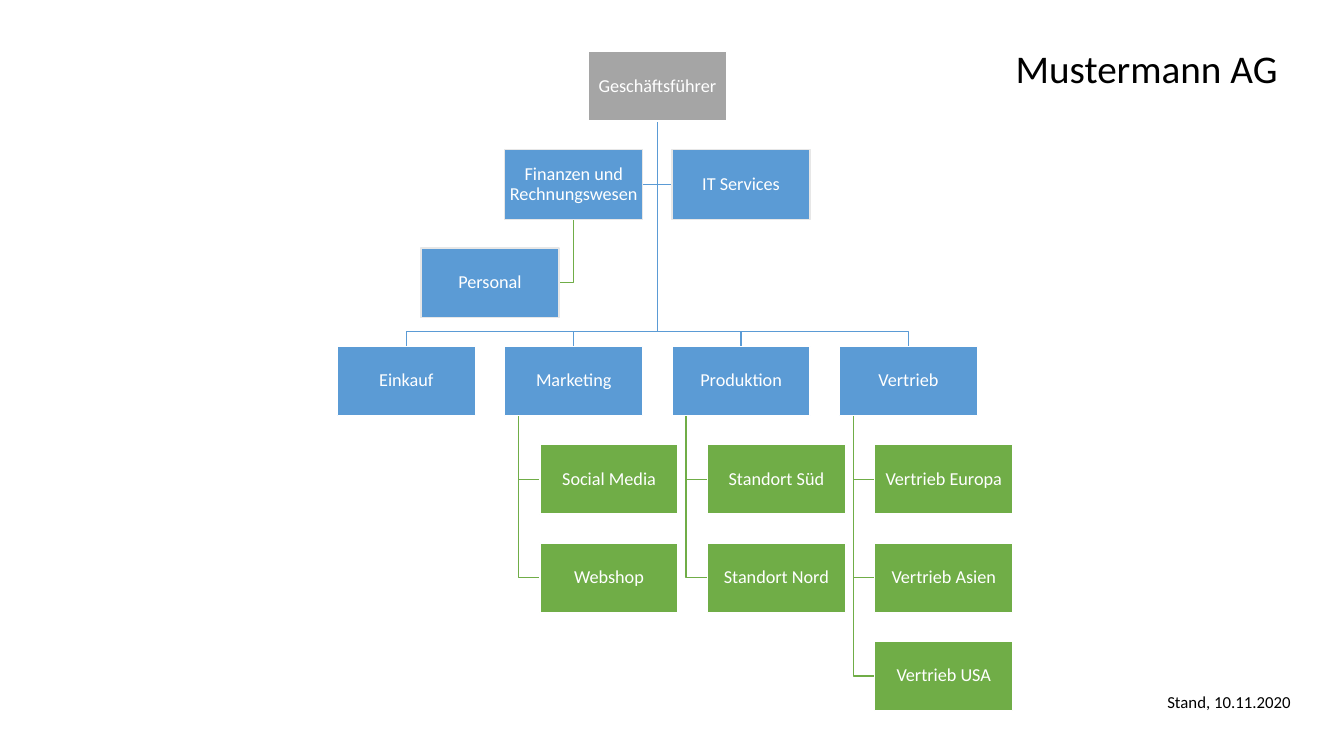
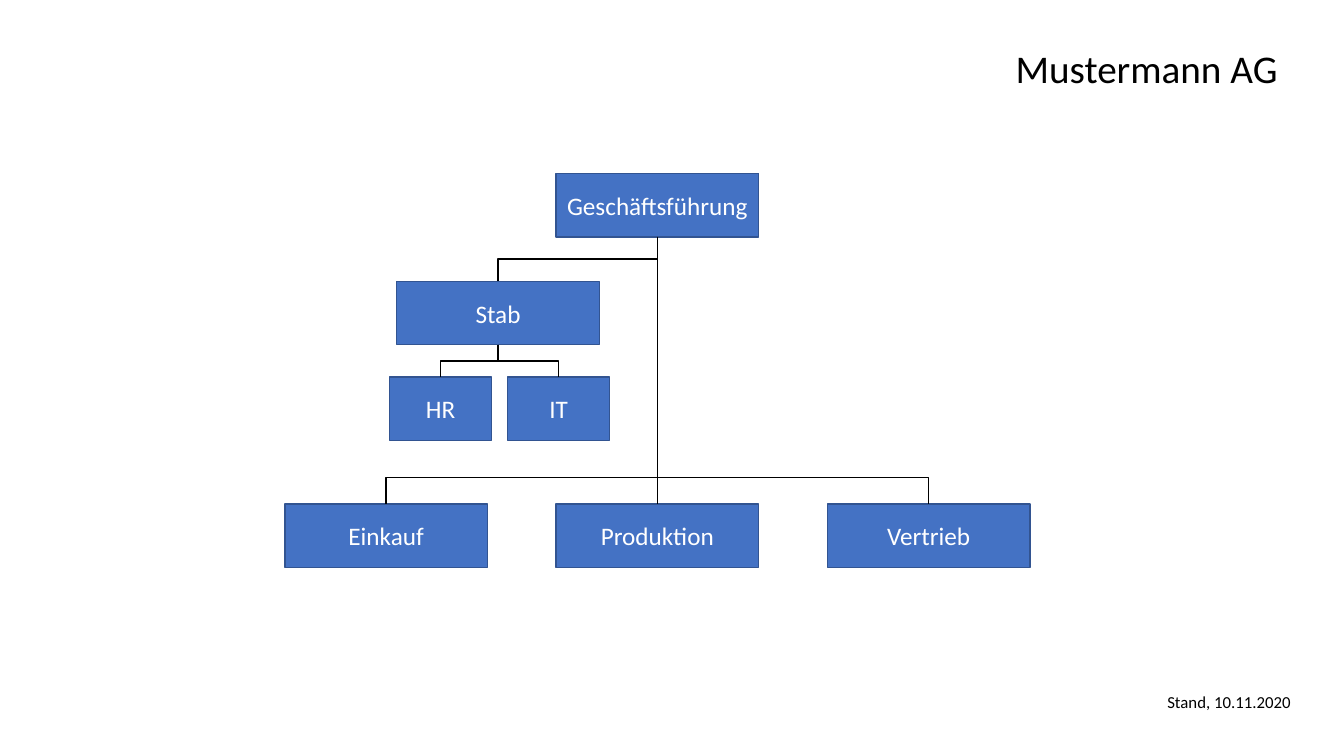
from dataclasses import dataclass

from lxml.etree import SubElement
from pptx import Presentation
from pptx.dml.color import RGBColor
from pptx.enum.shapes import MSO_CONNECTOR, MSO_SHAPE
from pptx.enum.text import MSO_ANCHOR, MSO_AUTO_SIZE, PP_ALIGN
from pptx.oxml.ns import qn
from pptx.shapes.autoshape import Shape
from pptx.shapes.connector import Connector
from pptx.slide import Slide
from pptx.text.text import TextFrame
from pptx.util import Inches, Pt

BLACK = RGBColor(0x00, 0x00, 0x00)
WHITE = RGBColor(0xFF, 0xFF, 0xFF)
PALE_GRAY = RGBColor(0xE7, 0xE7, 0xE7)
GRAY = RGBColor(0xA5, 0xA5, 0xA5)
SKY = RGBColor(0x5B, 0x9B, 0xD5)
GREEN = RGBColor(0x70, 0xAD, 0x47)
BLUE = RGBColor(0x44, 0x72, 0xC4)
NAVY = RGBColor(0x32, 0x54, 0x91)
FONT = "Calibri"
TOP, BOTTOM = 0, 2
AXIS = 6.52  # horizontal centre of both charts
GRID_WIDTH, GRID_HEIGHT = 1.37, 0.69


@dataclass(frozen=True)
class BoxStyle:
    fill: RGBColor
    border: RGBColor
    size: float
    width: float
    height: float
    inset: float
    spacing: float = 1.0
    preset: MSO_SHAPE = MSO_SHAPE.RECTANGLE


def grid_style(fill: RGBColor, border: RGBColor = WHITE) -> BoxStyle:
    return BoxStyle(fill, border, 13, GRID_WIDTH, GRID_HEIGHT, 0.01, 0.9)


def process_style(width: float) -> BoxStyle:
    return BoxStyle(BLUE, NAVY, 18, width, 0.63, 0.1,
                    preset=MSO_SHAPE.FLOWCHART_PROCESS)


HEAD = grid_style(GRAY)
STAFF = grid_style(SKY, PALE_GRAY)
UNIT = grid_style(SKY)
TEAM = grid_style(GREEN)
WIDE = process_style(2.01)
NARROW = process_style(1.01)

COLUMN_STEP = 1.66
FIRST_ROW, LAST_ROW = 0.51, 6.36
ROW_STEP = (LAST_ROW - FIRST_ROW) / 6
TEAM_INDENT = 0.35
STEM_INDENT = 0.14
BUS_Y = 3.29


@dataclass(frozen=True)
class GridBox:
    """A box of the detailed chart, placed by column and row."""
    text: str
    column: float
    row: int
    style: BoxStyle
    indent: float = 0

    @property
    def center(self) -> float:
        return AXIS + (self.column - 1.5) * COLUMN_STEP + self.indent

    @property
    def left(self) -> float:
        return self.center - GRID_WIDTH / 2

    @property
    def right(self) -> float:
        return self.left + GRID_WIDTH

    @property
    def top(self) -> float:
        return FIRST_ROW + self.row * ROW_STEP

    @property
    def middle(self) -> float:
        return self.top + GRID_HEIGHT / 2

    @property
    def bottom(self) -> float:
        return self.top + GRID_HEIGHT


DIRECTOR = GridBox("Geschäftsführer", 1.5, 0, HEAD)
FINANCE = GridBox("Finanzen und Rechnungswesen", 1, 1, STAFF)
SERVICES = GridBox("IT Services", 2, 1, STAFF)
PERSONNEL = GridBox("Personal", 0.5, 2, STAFF)
DEPARTMENTS = {
    "Einkauf": (),
    "Marketing": ("Social Media", "Webshop"),
    "Produktion": ("Standort Süd", "Standort Nord"),
    "Vertrieb": ("Vertrieb Europa", "Vertrieb Asien", "Vertrieb USA"),
}


def write(frame: TextFrame, text: str, size: float, color: RGBColor,
          align: PP_ALIGN, spacing: float = 1.0) -> None:
    paragraph = frame.paragraphs[0]
    paragraph.alignment = align
    paragraph.line_spacing = spacing
    run = paragraph.add_run()
    run.text = text
    run.font.name = FONT
    run.font.size = Pt(size)
    run.font.color.rgb = color


def add_chart_slide(deck: Presentation) -> Slide:
    """Add a slide with the company title and the date of issue."""
    slide = deck.slides.add_slide(deck.slide_layouts[5])
    title = slide.shapes.title
    title.left, title.top = Inches(0.42), Inches(0.4)
    title.width, title.height = Inches(12.35), Inches(0.56)
    title.text_frame.auto_size = MSO_AUTO_SIZE.NONE
    title.text_frame.vertical_anchor = MSO_ANCHOR.BOTTOM
    write(title.text_frame, "Mustermann AG", 28, BLACK, PP_ALIGN.RIGHT, 0.9)

    issued = slide.shapes.add_textbox(
        Inches(9.03), Inches(6.81), Inches(3.87), Inches(0.3)).text_frame
    issued.word_wrap = True
    issued.auto_size = MSO_AUTO_SIZE.SHAPE_TO_FIT_TEXT
    write(issued, "Stand, 10.11.2020", 12, BLACK, PP_ALIGN.RIGHT)
    return slide


def add_box(slide: Slide, text: str, center: float, top: float,
            style: BoxStyle) -> Shape:
    box = slide.shapes.add_shape(
        style.preset, Inches(center - style.width / 2), Inches(top),
        Inches(style.width), Inches(style.height))
    box.shadow.inherit = False
    box.fill.solid()
    box.fill.fore_color.rgb = style.fill
    box.line.color.rgb = style.border
    box.line.width = Pt(1)
    frame = box.text_frame
    frame.word_wrap = True
    frame.vertical_anchor = MSO_ANCHOR.MIDDLE
    frame.margin_left = frame.margin_right = Inches(style.inset)
    frame.margin_top = frame.margin_bottom = Inches(min(style.inset, 0.05))
    write(frame, text, style.size, WHITE, PP_ALIGN.CENTER, style.spacing)
    return box


def add_path(slide: Slide, color: RGBColor, *points: tuple[float, float]) -> None:
    """Draw an open angled line through points given in inches."""
    start, *others = [(Inches(x), Inches(y)) for x, y in points]
    builder = slide.shapes.build_freeform(*start)
    builder.add_line_segments(others, close=False)
    path = builder.convert_to_shape()
    path.shadow.inherit = False
    path.fill.background()
    path.line.color.rgb = color
    path.line.width = Pt(1)


def build_detailed_chart(deck: Presentation) -> None:
    slide = add_chart_slide(deck)
    boxes = [DIRECTOR, FINANCE, SERVICES, PERSONNEL]
    start = (DIRECTOR.center, DIRECTOR.bottom)

    for staff, edge in ((SERVICES, SERVICES.left), (FINANCE, FINANCE.right)):
        add_path(slide, SKY, start, (AXIS, staff.middle), (edge, staff.middle))
    add_path(slide, GREEN, (FINANCE.center, FINANCE.bottom),
             (FINANCE.center, PERSONNEL.middle), (PERSONNEL.right, PERSONNEL.middle))

    for column, (name, team_names) in enumerate(DEPARTMENTS.items()):
        unit = GridBox(name, column, 3, UNIT)
        add_path(slide, SKY, start, (AXIS, BUS_Y), (unit.center, BUS_Y),
                 (unit.center, unit.top))
        teams = [GridBox(team_name, column, row, TEAM, TEAM_INDENT)
                 for row, team_name in enumerate(team_names, start=4)]
        stem_x = unit.left + STEM_INDENT
        for team in teams:
            add_path(slide, GREEN, (stem_x, unit.bottom), (stem_x, team.middle),
                     (team.left, team.middle))
        boxes += [unit, *teams]

    for box in boxes:
        add_box(slide, box.text, box.center, box.top, box.style)


def format_line(line: Connector) -> None:
    line.line.color.rgb = BLACK
    line.line.width = Pt(1)
    SubElement(line.element.spPr, qn("a:effectLst"))


def join(slide: Slide, upper: Shape, lower: Shape, kind: MSO_CONNECTOR) -> Connector:
    line = slide.shapes.add_connector(kind, 0, 0, 0, 0)
    line.begin_connect(upper, BOTTOM)
    line.end_connect(lower, TOP)
    format_line(line)
    return line


def add_elbow(slide: Slide, upper: Shape, lower: Shape, bend: float = 0.5) -> None:
    """Join two boxes down, across and down; bend is the share of the drop before the turn."""
    elbow = join(slide, upper, lower, MSO_CONNECTOR.ELBOW)
    x1, y1, x2, y2 = elbow.begin_x, elbow.begin_y, elbow.end_x, elbow.end_y
    # The preset runs sideways, so its frame is turned a quarter.
    drop, reach = y2 - y1, abs(x2 - x1)
    elbow.left, elbow.top = (x1 + x2 - drop) // 2, (y1 + y2 - reach) // 2
    elbow.width, elbow.height = drop, reach
    frame = elbow.element.spPr.find(qn("a:xfrm"))
    frame.set("rot", str((270 if x2 > x1 else 90) * 60000))
    frame.set("flipH", "1" if x2 > x1 else "0")
    adjustments = elbow.element.spPr.find(qn("a:prstGeom")).find(qn("a:avLst"))
    SubElement(adjustments, qn("a:gd"), name="adj1", fmla=f"val {round(bend * 100000)}")


def build_simple_chart(deck: Presentation) -> None:
    slide = add_chart_slide(deck)
    management = add_box(slide, "Geschäftsführung", AXIS, 1.72, WIDE)
    staff = add_box(slide, "Stab", 4.94, 2.79, WIDE)
    add_elbow(slide, management, staff)
    for name, center in (("HR", 4.37), ("IT", 5.54)):
        add_elbow(slide, staff, add_box(slide, name, center, 3.74, NARROW))

    for offset, name in enumerate(("Einkauf", "Produktion", "Vertrieb"), start=-1):
        unit = add_box(slide, name, AXIS + offset * 2.69, 5, WIDE)
        if offset:
            add_elbow(slide, management, unit, 0.9)
        else:
            join(slide, management, unit, MSO_CONNECTOR.STRAIGHT)


def main() -> None:
    deck = Presentation()
    deck.slide_width, deck.slide_height = Inches(13.33), Inches(7.5)
    build_detailed_chart(deck)
    build_simple_chart(deck)
    deck.save("out.pptx")


if __name__ == "__main__":
    main()
